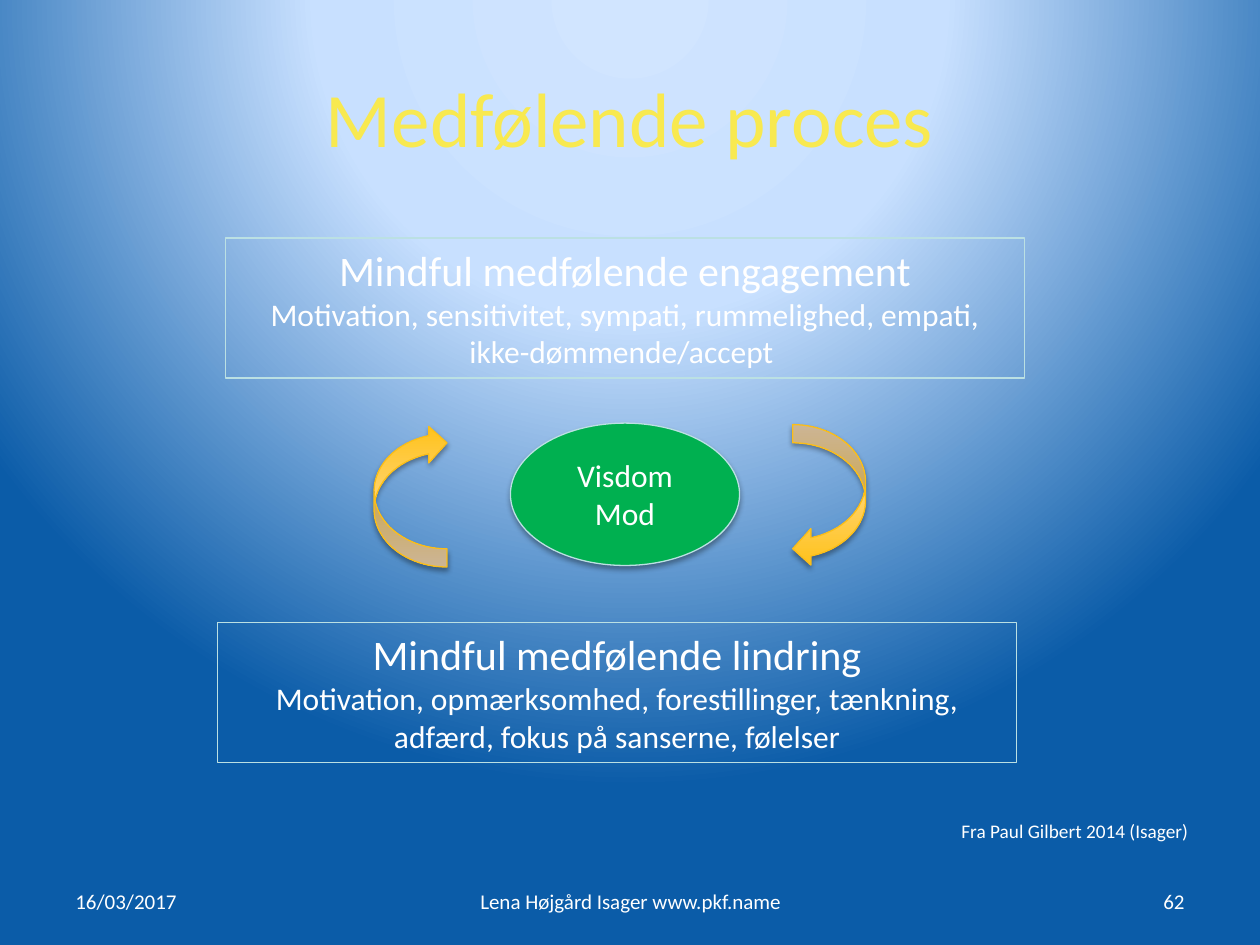
import pptx
import pptx.util
import pptx.dml.color
import pptx.enum.shapes
import pptx.enum.text
import pptx.oxml
import pptx.oxml.ns

Cm = pptx.util.Cm
Pt = pptx.util.Pt
RGBColor = pptx.dml.color.RGBColor
MSO_SHAPE = pptx.enum.shapes.MSO_SHAPE
PP_ALIGN = pptx.enum.text.PP_ALIGN
MSO_ANCHOR = pptx.enum.text.MSO_ANCHOR

FONT = "Calibri"
WHITE = RGBColor(0xFF, 0xFF, 0xFF)
YELLOW = RGBColor(0xF8, 0xE9, 0x50)
GREEN = RGBColor(0x00, 0xB0, 0x50)
PALE_TEAL = RGBColor(0xBB, 0xE0, 0xE3)
AMBER = RGBColor(0xFF, 0xC2, 0x1A)
CREAM = RGBColor(0xFF, 0xE3, 0xBB)
GOLD = RGBColor(0xFB, 0xBE, 0x18)
SKY = RGBColor(0xD1, 0xE5, 0xFF)
LIGHT_BLUE = RGBColor(0xC8, 0xE0, 0xFF)
DEEP_BLUE = RGBColor(0x0B, 0x5C, 0xA8)

NS = pptx.oxml.ns.nsdecls("a", "p")


def set_background(s):
    stops = "".join(
        f'<a:gs pos="{pos * 1000}"><a:srgbClr val="{color}"/></a:gs>'
        for pos, color in ((0, SKY), (40, LIGHT_BLUE), (100, DEEP_BLUE))
    )
    bg = pptx.oxml.parse_xml(
        f'<p:bg {NS}><p:bgPr><a:gradFill rotWithShape="1"><a:gsLst>{stops}</a:gsLst>'
        '<a:path path="circle"><a:fillToRect l="50000" t="-80000" r="50000" b="180000"/>'
        "</a:path></a:gradFill><a:effectLst/></p:bgPr></p:bg>"
    )
    s.element.cSld.insert(0, bg)


def add_shadow(sp):
    effects = sp.element.spPr.find(pptx.oxml.ns.qn("a:effectLst"))
    effects.append(pptx.oxml.parse_xml(
        f'<a:outerShdw {NS} blurRad="{Pt(3.1)}" dist="{Pt(1.8)}" dir="5400000" '
        'rotWithShape="0"><a:srgbClr val="000000"><a:alpha val="35000"/>'
        "</a:srgbClr></a:outerShdw>"
    ))


def write_lines(tf, lines, align, color=WHITE, anchor=MSO_ANCHOR.MIDDLE):
    tf.word_wrap = True
    tf.vertical_anchor = anchor
    for i, (text, size) in enumerate(lines):
        p = tf.add_paragraph() if i else tf.paragraphs[0]
        p.alignment = align
        r = p.add_run()
        r.text = text
        r.font.name = FONT
        r.font.size = Pt(size)
        r.font.color.rgb = color


def add_text(s, box, text, size, align=PP_ALIGN.CENTER, color=WHITE):
    sp = s.shapes.add_textbox(*map(Cm, box))
    write_lines(sp.text_frame, [(text, size)], align, color)
    return sp


def add_outlined(s, kind, box, line):
    sp = s.shapes.add_shape(kind, *map(Cm, box))
    sp.shadow.inherit = False
    sp.line.color.rgb = line
    sp.line.width = Pt(0.75)
    return sp


def add_panel(s, left, top, heading, body):
    sp = add_outlined(s, MSO_SHAPE.RECTANGLE, (left, top, 16.1, 2.82), PALE_TEAL)
    sp.fill.background()
    write_lines(sp.text_frame, [(heading, 24), (body, 18)], PP_ALIGN.CENTER,
                anchor=MSO_ANCHOR.TOP)


def add_core(s):
    sp = add_outlined(s, MSO_SHAPE.OVAL, (10.29, 8.53, 4.62, 2.87), PALE_TEAL)
    sp.fill.solid()
    sp.fill.fore_color.rgb = GREEN
    add_shadow(sp)
    write_lines(sp.text_frame, [("Visdom", 18), ("Mod", 18)], PP_ALIGN.CENTER)


def add_cycle_arrow(s, left, rotation):
    sp = add_outlined(s, MSO_SHAPE.CURVED_LEFT_ARROW, (left, 8.56, 1.47, 2.87), GOLD)
    sp.rotation = rotation
    sp.fill.gradient()
    sp.fill.gradient_angle = 90
    for stop, pos, color in zip(sp.fill.gradient_stops, (0, 1), (AMBER, CREAM)):
        stop.position = pos
        stop.color.rgb = color
    add_shadow(sp)


def add_credit(s):
    sp = add_text(s, (19.28, 16.51, 4.85, 0.48), "Fra Paul Gilbert 2014 (Isager)",
                  11, PP_ALIGN.LEFT)
    tf = sp.text_frame
    tf.word_wrap = False
    tf.vertical_anchor = MSO_ANCHOR.TOP
    tf.margin_left = tf.margin_right = Cm(0.1)
    tf.margin_top = tf.margin_bottom = 0


def main():
    prs = pptx.Presentation()
    prs.slide_width, prs.slide_height = Cm(25.4), Cm(19.05)
    s = prs.slides.add_slide(prs.slide_layouts[6])
    set_background(s)

    add_text(s, (1.27, 0.76, 22.86, 3.18), "Medfølende proces", 44, color=YELLOW)
    for left, width, text, align in (
        (1.27, 5.92, "16/03/2017", PP_ALIGN.LEFT),
        (8.69, 8.05, "Lena Højgård Isager www.pkf.name", PP_ALIGN.CENTER),
        (18.21, 5.92, "62", PP_ALIGN.RIGHT),
    ):
        add_text(s, (left, 17.65, width, 1.02), text, 12, align)

    add_panel(s, 4.55, 4.8, "Mindful medfølende engagement",
              "Motivation, sensitivitet, sympati, rummelighed, empati, "
              "ikke-dømmende/accept ")
    add_panel(s, 4.39, 12.55, "Mindful medfølende lindring",
              "Motivation, opmærksomhed, forestillinger, tænkning, "
              "adfærd, fokus på sanserne, følelser")
    add_core(s)
    add_cycle_arrow(s, 15.98, 0)
    add_cycle_arrow(s, 7.54, 180)
    add_credit(s)
    prs.save("out.pptx")


if __name__ == "__main__":
    main()
